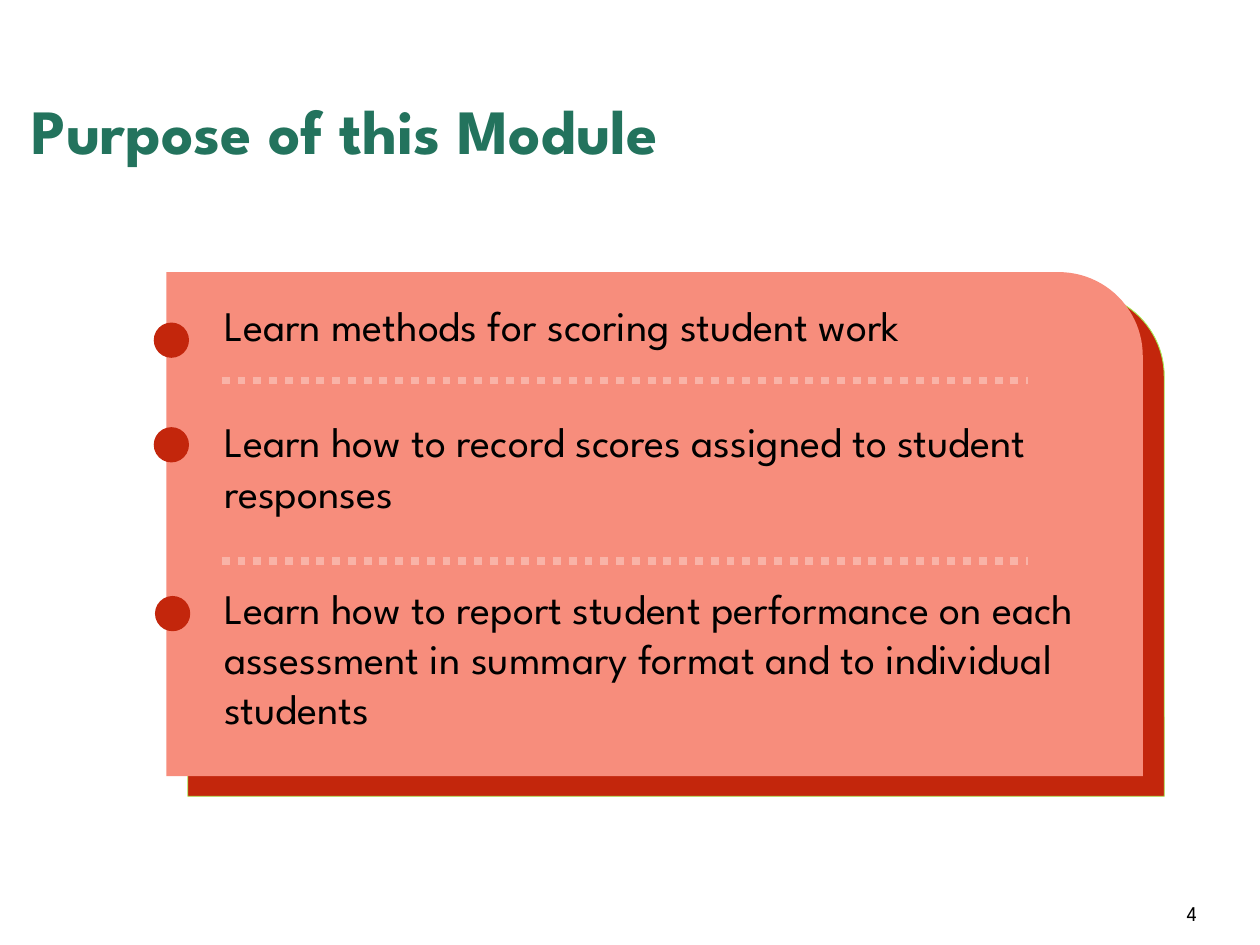
from lxml.etree import SubElement
from pptx import Presentation
from pptx.dml.color import RGBColor
from pptx.enum.dml import MSO_LINE
from pptx.enum.shapes import MSO_CONNECTOR, MSO_SHAPE
from pptx.enum.text import MSO_ANCHOR, PP_ALIGN
from pptx.oxml.ns import qn
from pptx.util import Inches, Pt

FONT = "League Spartan"
RED, CORAL, PINK = "C3260C", "F78D7C", "F9B3A7"
LIME, GREEN, BLACK = "A7EA52", "23735D", "000000"

TITLE = "Purpose of this Module"
PURPOSES = [
    "Learn methods for scoring student work",
    "Learn how to record scores assigned to student responses",
    "Learn how to report student performance on each assessment in summary format "
    "and to individual students",
]
PAGE_NUMBER = "4"

CARD_SIZE = (7.75, 4)
CARDS = [(1.49, 2.32, RED, LIME), (1.32, 2.16, CORAL, None)]
DOT = 0.28
DOTS = [(1.22, 2.56), (1.22, 3.39), (1.23, 4.73)]
DIVIDER_LEFT, DIVIDER_RIGHT = 1.76, 8.16
DIVIDER_TOPS = [3.02, 4.45]
PURPOSE_GAP = 37.5


def color(hex_code):
    return RGBColor.from_string(hex_code)


def add_filled(page, preset, place, fill, outline=None):
    shape = page.shapes.add_shape(preset, *map(Inches, place))
    shape.shadow.inherit = False
    shape.fill.solid()
    shape.fill.fore_color.rgb = color(fill)
    if outline:
        shape.line.color.rgb = color(outline)
        shape.line.width = Pt(0.5)
    else:
        shape.line.fill.background()


def add_divider(page, top):
    line = page.shapes.add_connector(
        MSO_CONNECTOR.STRAIGHT,
        *map(Inches, (DIVIDER_LEFT, top, DIVIDER_RIGHT, top)))
    line.line.color.rgb = color(PINK)
    line.line.width = Pt(4.5)
    line.line.dash_style = MSO_LINE.ROUND_DOT
    SubElement(line._element.spPr, qn("a:effectLst"))


def add_text(page, place, paragraphs, size, fill=BLACK, bold=False, gap=0,
             align=PP_ALIGN.LEFT, anchor=MSO_ANCHOR.TOP, insets=(0.1, 0.05, 0.1, 0.05)):
    """Add a text box; gap is the space in points between its paragraphs."""
    box = page.shapes.add_textbox(*map(Inches, place))
    frame = box.text_frame
    frame.word_wrap = True
    frame.vertical_anchor = anchor
    (frame.margin_left, frame.margin_top,
     frame.margin_right, frame.margin_bottom) = map(Inches, insets)
    frame.text = "\n".join(paragraphs)
    for index, para in enumerate(frame.paragraphs):
        para.alignment = align
        para.space_before = Pt(gap if index else 0)
        for span in para.runs:
            span.font.name = FONT
            span.font.size = Pt(size)
            span.font.bold = bold
            span.font.color.rgb = color(fill)


def main():
    deck = Presentation()
    deck.slide_width, deck.slide_height = Inches(10), Inches(7.5)
    page = deck.slides.add_slide(deck.slide_layouts[6])

    for left, top, fill, outline in CARDS:
        add_filled(page, MSO_SHAPE.ROUND_1_RECTANGLE, (left, top, *CARD_SIZE), fill, outline)
    for left, top in DOTS:
        add_filled(page, MSO_SHAPE.OVAL, (left, top, DOT, DOT), RED)
    for top in DIVIDER_TOPS:
        add_divider(page, top)

    add_text(page, (0.25, 0.08, 9, 1.25), [TITLE], 36, GREEN, bold=True,
             anchor=MSO_ANCHOR.BOTTOM, insets=(0, 0.05, 0, 0))
    add_text(page, (1.68, 2.33, 7.17, 3.77), PURPOSES, 24, gap=PURPOSE_GAP)
    add_text(page, (8.67, 6.95, 0.83, 0.4), [PAGE_NUMBER], 12, align=PP_ALIGN.RIGHT,
             anchor=MSO_ANCHOR.BOTTOM, insets=(0, 0, 0, 0))

    deck.save("out.pptx")


if __name__ == "__main__":
    main()
